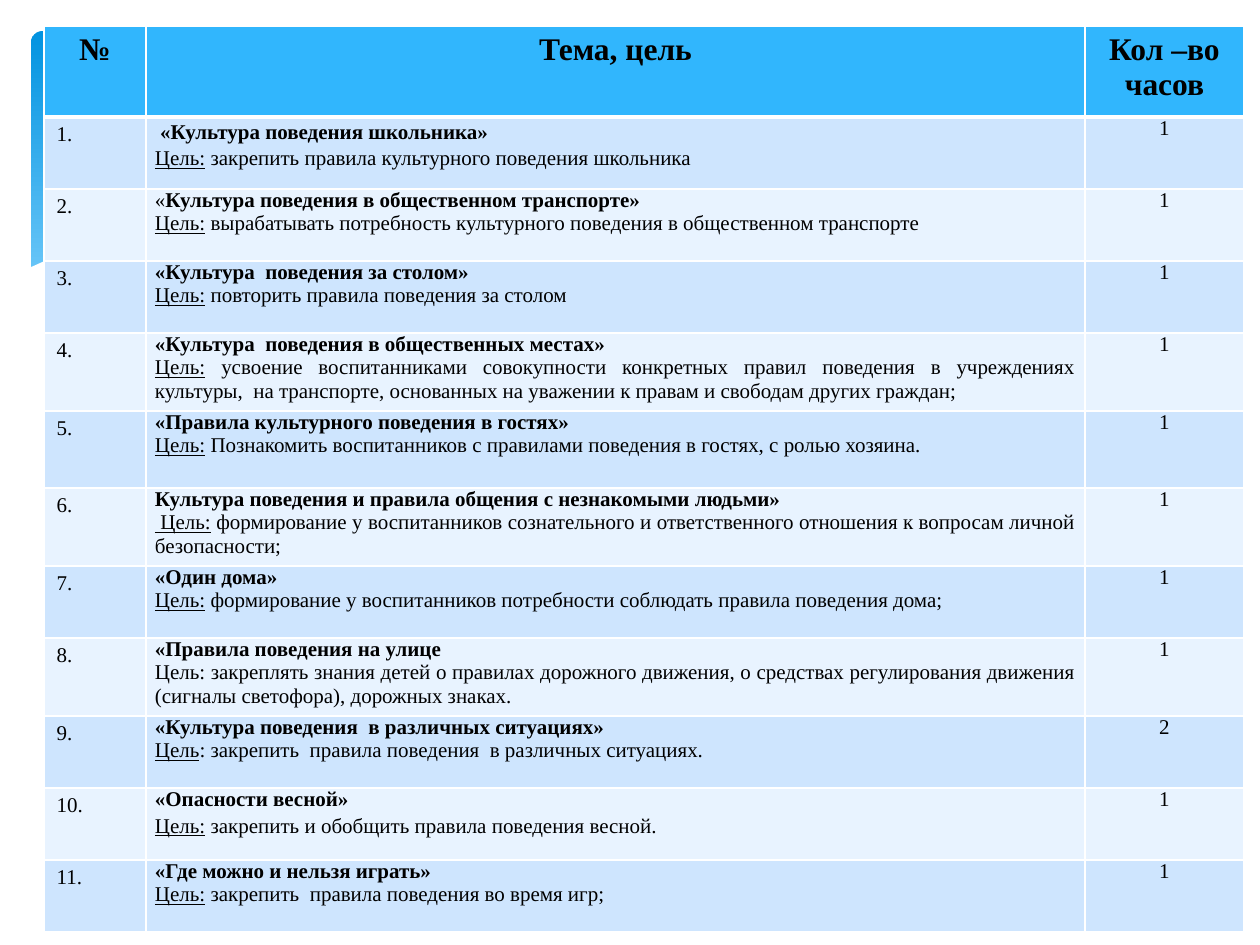
from dataclasses import dataclass

from lxml.etree import SubElement
from pptx import Presentation
from pptx.dml.color import RGBColor
from pptx.enum.shapes import MSO_SHAPE
from pptx.enum.text import PP_ALIGN
from pptx.oxml.ns import qn
from pptx.util import Pt

PX = 7257.14  # EMU per px, 126 px to the inch


@dataclass(frozen=True)
class Theme:
    font: str = "Times New Roman"
    header_size: int = 18
    body_size: int = 12
    ink: str = "000000"
    white: str = "FFFFFF"
    header: str = "31B6FD"
    bands: tuple = ("CEE5FE", "E8F3FF")
    panel: tuple = (("0293E0", 0), ("83D3FE", 0.9))


THEME = Theme()
LOOSE = 1.15

HEADERS = [["№"], ["Тема, цель"], ["Кол –во", "часов"]]
# plain lead-in, title, underlined label, goal, hours
LESSONS = [
    (" ", "«Культура поведения школьника»", "Цель:",
     " закрепить правила культурного поведения школьника", 1),
    ("«", "Культура поведения в общественном транспорте»", "Цель:",
     " вырабатывать потребность культурного поведения в общественном транспорте", 1),
    ("", "«Культура  поведения за столом»", "Цель:",
     " повторить правила поведения за столом", 1),
    ("", "«Культура  поведения в общественных местах»", "Цель:",
     " усвоение воспитанниками совокупности конкретных правил поведения в учреждениях "
     "культуры,  на транспорте, основанных на уважении к правам и свободам других граждан;", 1),
    ("", "«Правила культурного поведения в гостях»", "Цель:",
     " Познакомить воспитанников с правилами поведения в гостях, с ролью хозяина.", 1),
    ("", "Культура поведения и правила общения с незнакомыми людьми»", " Цель:",
     " формирование у воспитанников сознательного и ответственного отношения "
     "к вопросам личной безопасности;", 1),
    ("", "«Один дома»", "Цель:",
     " формирование у воспитанников потребности соблюдать правила поведения дома;", 1),
    ("", "«Правила поведения на улице", "",
     "Цель: закреплять знания детей о правилах дорожного движения, о средствах "
     "регулирования движения (сигналы светофора), дорожных знаках.", 1),
    ("", "«Культура поведения  в различных ситуациях»", "Цель",
     ": закрепить  правила поведения  в различных ситуациях.", 2),
    ("", "«Опасности весной»", "Цель:",
     " закрепить и обобщить правила поведения весной.", 1),
    ("", "«Где можно и нельзя играть»", "Цель:",
     " закрепить  правила поведения во время игр;", 1),
]
LOOSE_TITLES = {1}
LOOSE_GOALS = {1, 10}

TABLE_LEFT, TABLE_TOP = 44, 26
COLUMN_WIDTHS = [102, 939, 159]
ROW_HEIGHTS = [91, 72, 72, 72, 78, 77, 78, 72, 78, 72, 72, 72]
PANEL = (31, 31, 1198, 340)
WAVE = [(29, 268), (58, 255), (107, 243), (166, 234), (223, 232), (290, 234),
        (368, 239), (460, 254), (563, 277), (699, 302), (867, 337), (1043, 349),
        (1146, 338), (1231, 310), (1231, 415), (29, 415)]


def px(length):
    return round(length * PX)


def color(code):
    return RGBColor.from_string(code)


def add_backdrop(page):
    """Gradient panel whose lower part is cut off by a white wave."""
    panel = page.shapes.add_shape(MSO_SHAPE.ROUNDED_RECTANGLE, *map(px, PANEL))
    panel.adjustments[0] = 0.034
    panel.fill.gradient()
    panel.fill.gradient_angle = 270
    for stop, (code, position) in zip(panel.fill.gradient_stops, THEME.panel):
        stop.color.rgb = color(code)
        stop.position = position
    builder = page.shapes.build_freeform(*WAVE[0], scale=PX)
    builder.add_line_segments(WAVE[1:], close=True)
    wave = builder.convert_to_shape()
    wave.fill.solid()
    wave.fill.fore_color.rgb = color(THEME.white)
    for shape in (panel, wave):
        shape.line.fill.background()
        shape.shadow.inherit = False


def style_cell(cell, fill, bottom_width=1, tight=False):
    cell.fill.solid()
    cell.fill.fore_color.rgb = color(fill)
    if tight:
        cell.margin_left = cell.margin_right = px(9)
        cell.margin_top = cell.margin_bottom = 0
    properties = cell._tc.get_or_add_tcPr()
    widths = {"L": 1, "R": 1, "T": 1, "B": bottom_width}
    for index, (side, width) in enumerate(widths.items()):
        border = SubElement(properties, qn(f"a:ln{side}"), w=str(Pt(width)))
        SubElement(SubElement(border, qn("a:solidFill")), qn("a:srgbClr"), val=THEME.white)
        properties.insert(index, border)


def write(cell, paragraphs, size=THEME.body_size):
    """Each paragraph is (alignment, line spacing, [(text, bold, underline), ...])."""
    frame = cell.text_frame
    for index, (alignment, spacing, spans) in enumerate(paragraphs):
        para = frame.add_paragraph() if index else frame.paragraphs[0]
        para.alignment = alignment
        para.line_spacing = spacing
        for text, bold, underline in spans:
            if not text:
                continue
            span = para.add_run()
            span.text = text
            font = span.font
            font.name, font.size = THEME.font, Pt(size)
            font.bold, font.underline = bold, underline
            font.color.rgb = color(THEME.ink)


def layout(loose):
    return (PP_ALIGN.LEFT, LOOSE) if loose else (PP_ALIGN.JUSTIFY, 1.0)


def add_lessons(page):
    table = page.shapes.add_table(
        len(ROW_HEIGHTS), len(COLUMN_WIDTHS), px(TABLE_LEFT), px(TABLE_TOP),
        px(sum(COLUMN_WIDTHS)), px(sum(ROW_HEIGHTS))).table
    for column, width in zip(table.columns, COLUMN_WIDTHS):
        column.width = px(width)
    for row, height in zip(table.rows, ROW_HEIGHTS):
        row.height = px(height)

    for cell, lines in zip(table.rows[0].cells, HEADERS):
        style_cell(cell, THEME.header, bottom_width=3)
        write(cell, [(PP_ALIGN.CENTER, 1.0, [(line, True, False)]) for line in lines],
              THEME.header_size)

    for number, (lead, title, label, goal, hours) in enumerate(LESSONS, 1):
        number_cell, topic_cell, hours_cell = table.rows[number].cells
        fill = THEME.bands[(number - 1) % 2]
        style_cell(number_cell, fill)
        style_cell(topic_cell, fill, tight=True)
        style_cell(hours_cell, fill, tight=True)
        write(number_cell, [(PP_ALIGN.LEFT, 1.0, [(f"{number}.", False, False)])])
        write(topic_cell, [
            (*layout(number in LOOSE_TITLES), [(lead, False, False), (title, True, False)]),
            (*layout(number in LOOSE_GOALS), [(label, False, True), (goal, False, False)]),
        ])
        write(hours_cell, [(PP_ALIGN.CENTER, 1.0, [(str(hours), False, False)])])


def main():
    deck = Presentation()
    deck.slide_width, deck.slide_height = px(1260), px(945)
    page = deck.slides.add_slide(deck.slide_layouts[6])
    add_backdrop(page)
    add_lessons(page)
    deck.save("out.pptx")


if __name__ == "__main__":
    main()
